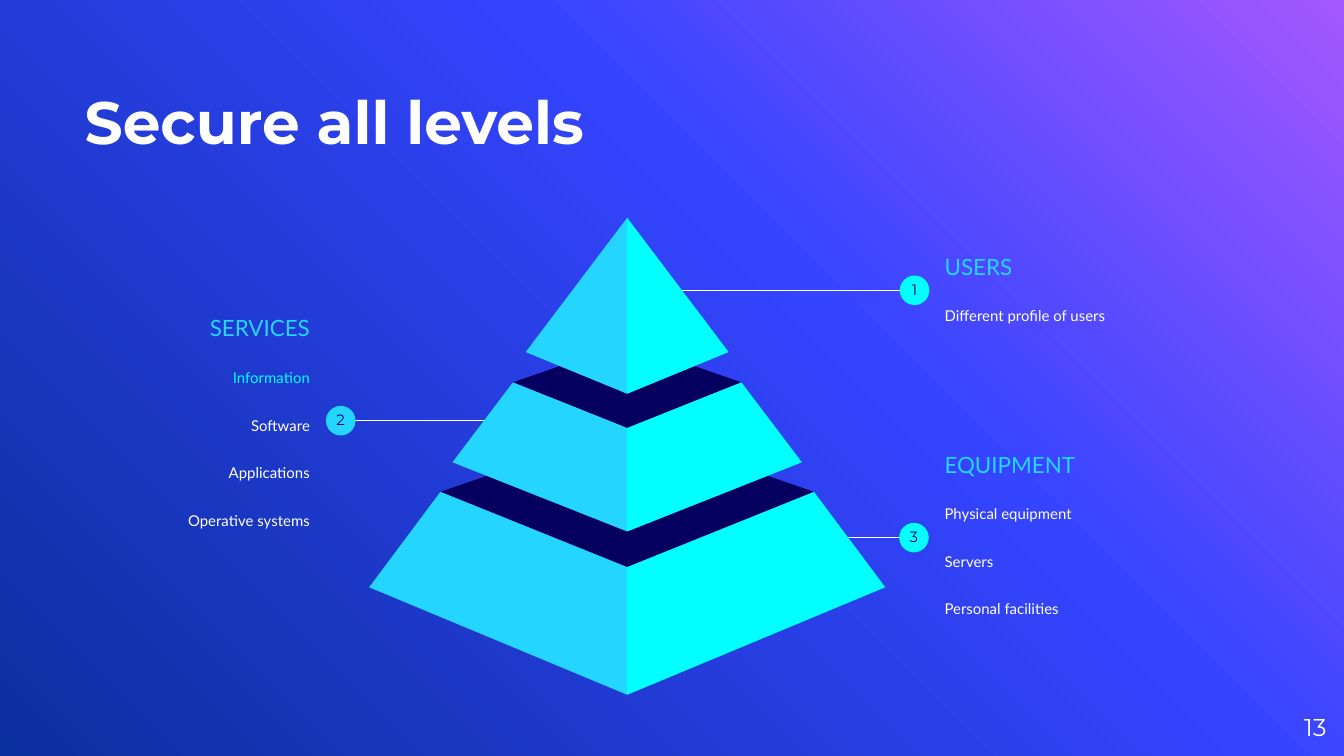
from copy import deepcopy

from pptx import Presentation
from pptx.dml.color import RGBColor
from pptx.enum.shapes import MSO_CONNECTOR as CONN, MSO_SHAPE as SHAPE
from pptx.enum.text import MSO_ANCHOR as ANCHOR, PP_ALIGN as ALIGN
from pptx.oxml.ns import qn
from pptx.util import Inches, Pt
from lxml.etree import SubElement

WHITE = RGBColor(0xFF, 0xFF, 0xFF)
CYAN = RGBColor(0x00, 0xFF, 0xFF)
SKY = RGBColor(0x24, 0xD6, 0xFF)
NAVY = RGBColor(0x05, 0x00, 0x60)
PURPLE = RGBColor(0xA4, 0x58, 0xFF)
BLUE = RGBColor(0x35, 0x44, 0xFF)
DEEP = RGBColor(0x0A, 0x2F, 0x9E)

CELL = Inches(0.1)  # square grid cell
COLS, ROWS = 100, 56.25
AXIS = 46.67  # column of the pyramid's front edge
BADGE = 2.2


def cells(*values):
    return [round(v * CELL) for v in values]


class Deck:
    head_font, body_font = "Montserrat", "Lato"

    def __init__(self, prs):
        self.s = prs.slides.add_slide(prs.slide_layouts[6])

    def background(self, stops, angle):
        fill = self.s.background.fill
        fill.gradient()
        fill.gradient_angle = angle
        gs_list = next(self.s.element.iter(qn("a:gsLst")))
        for _ in stops[2:]:
            gs_list.append(deepcopy(gs_list[0]))
        for stop, (position, color) in zip(fill.gradient_stops, stops):
            stop.position, stop.color.rgb = position, color

    def text(self, box, lines, font, align=ALIGN.LEFT, anchor=ANCHOR.MIDDLE, inset=0):
        """Each line is (text, size, color, bold, space after)."""
        tf = self.s.shapes.add_textbox(*cells(*box)).text_frame
        tf.word_wrap, tf.vertical_anchor = True, anchor
        tf.margin_left = tf.margin_right = tf.margin_top = tf.margin_bottom = Inches(inset)
        for i, (words, size, color, bold, after) in enumerate(lines):
            p = tf.add_paragraph() if i else tf.paragraphs[0]
            p.alignment, p.space_after = align, Pt(after)
            r = p.add_run()
            r.text = words
            r.font.name, r.font.size, r.font.bold = font, Pt(size), bold
            r.font.color.rgb = color

    def line(self, x1, x2, y):
        sp = self.s.shapes.add_connector(CONN.STRAIGHT, *cells(x1, y, x2, y))
        sp.line.color.rgb, sp.line.width = WHITE, Pt(0.75)
        SubElement(sp.element.spPr, qn("a:effectLst"))

    def paint(self, sp, color):
        sp.shadow.inherit = False
        sp.fill.solid()
        sp.fill.fore_color.rgb = color
        sp.line.fill.background()

    def polygon(self, points, color):
        first, *rest = [cells(x, y) for x, y in points]
        builder = self.s.shapes.build_freeform(*first)
        builder.add_line_segments(rest, close=True)
        self.paint(builder.convert_to_shape(), color)

    def badge(self, x, y, number, color):
        """Numbered circle centred on row y."""
        top = y - BADGE / 2
        self.paint(self.s.shapes.add_shape(SHAPE.OVAL, *cells(x, top, BADGE, BADGE)), color)
        self.text((x - 0.25, y - 1.75, 2.7, 3.4), [(number, 8, NAVY, False, 0)],
                  self.head_font, ALIGN.CENTER, inset=0.1)

    def label(self, x, y, heading, items, align):
        lines = [(heading, 12, SKY, False, 14.4)]
        lines += [(words, 8, color, False, 16) for words, color in items]
        self.text((x, y, 20.4, 15.1), lines, self.body_font, align, inset=0.1)

    def tier(self, top, bottom, back=None):
        """top and bottom are (half width, side row, front row)."""
        (top_half, top_side, top_front), (half, side, front) = top, bottom
        if back:  # lid
            self.polygon([(AXIS - top_half, top_side), (AXIS, top_front),
                          (AXIS + top_half, top_side), (AXIS, back)], NAVY)
        for sign, color in ((-1, SKY), (1, CYAN)):
            self.polygon([(AXIS + sign * top_half, top_side), (AXIS + sign * half, side),
                          (AXIS, front), (AXIS, top_front)], color)


def main():
    prs = Presentation()
    prs.slide_width, prs.slide_height = cells(COLS, ROWS)
    deck = Deck(prs)
    deck.background([(0, PURPLE), (0.39, BLUE), (1, DEEP)], 225)

    # Title and slide number
    deck.text((6.3, 2.25, 65.8, 9.4), [("Secure all levels", 32, WHITE, True, 0)],
              deck.head_font, anchor=ANCHOR.BOTTOM)
    deck.text((92.7, 51.95, 6, 4.3), [("13", 13, WHITE, False, 0)],
              deck.head_font, ALIGN.RIGHT)

    # Level labels: number, row, line ends, badge column and color, text corner
    levels = [
        ("3", 40, 62.7, 69.1, 66.9, CYAN, 69.3, 32.2, ALIGN.LEFT, "EQUIPMENT",
         [("Physical equipment", WHITE), ("Servers", WHITE), ("Personal facilities", WHITE)]),
        ("2", 31.3, 36.4, 25, 24.25, SKY, 3.65, 23.85, ALIGN.RIGHT, "SERVICES",
         [("Information", CYAN), ("Software", WHITE), ("Applications", WHITE),
          ("Operative systems", WHITE)]),
        ("1", 21.6, 50.3, 69.1, 66.95, CYAN, 69.3, 13.95, ALIGN.LEFT, "USERS",
         [("Different profile of users", WHITE)]),
    ]
    for number, y, start, end, badge_x, color, left, top, align, heading, items in levels:
        deck.line(start, end, y)
        deck.label(left, top, heading, items, align)
        deck.badge(badge_x, y, number, color)

    # Pyramid, bottom tier first
    deck.tier((13.9, 36.6, 42.2), (19.2, 43.7, 51.7), back=31.8)
    deck.tier((8.5, 28.45, 31.85), (13, 34.4, 39.55), back=25.5)
    deck.tier((0, 16.2, 16.2), (7.55, 26.2, 29.3))

    prs.save("out.pptx")


if __name__ == "__main__":
    main()
